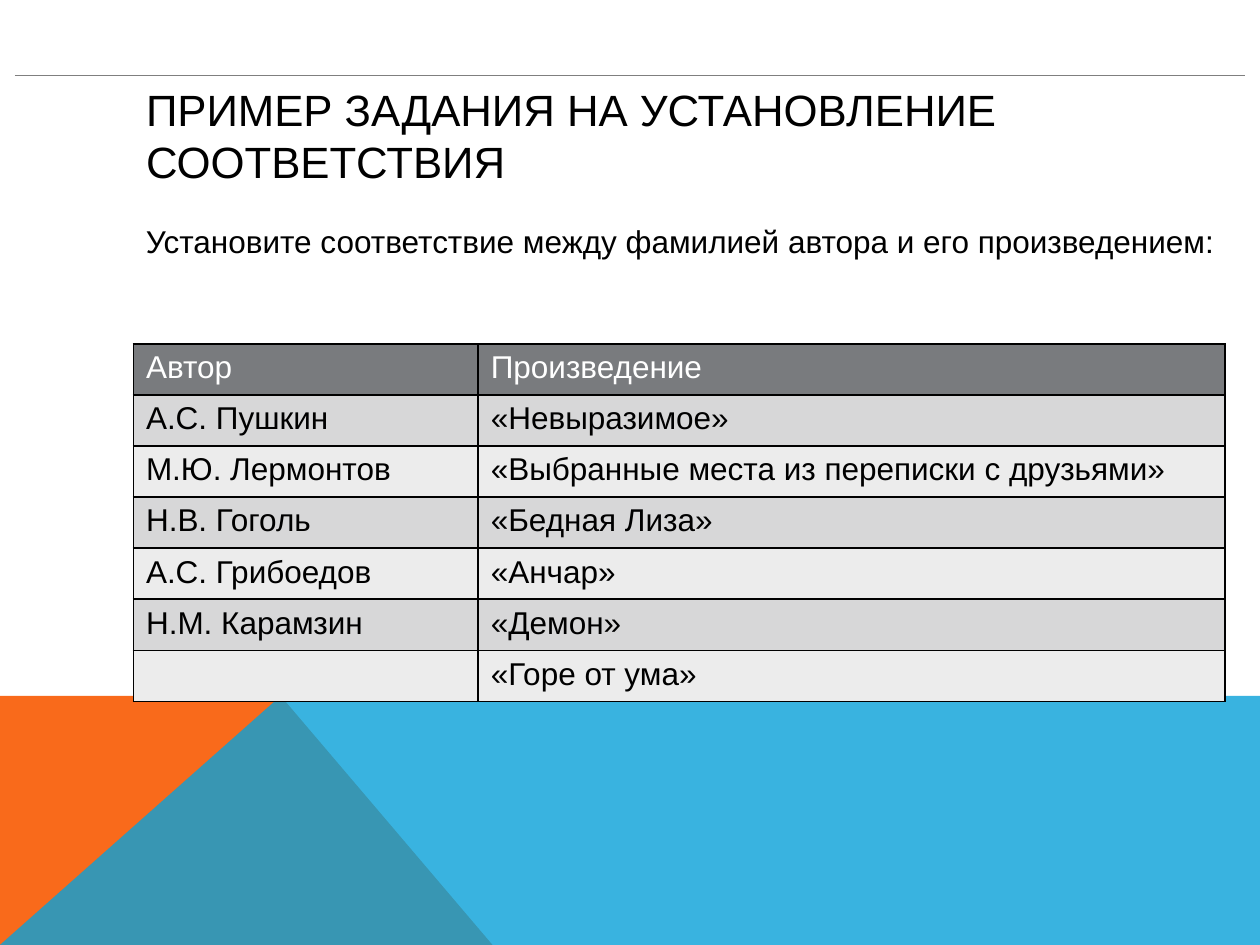
from lxml.etree import SubElement
from pptx import Presentation
from pptx.dml.color import RGBColor
from pptx.enum.shapes import MSO_CONNECTOR
from pptx.enum.text import MSO_ANCHOR, MSO_AUTO_SIZE, PP_ALIGN
from pptx.oxml.ns import qn
from pptx.util import Cm, Pt

# Content
TITLE = "ПРИМЕР ЗАДАНИЯ НА УСТАНОВЛЕНИЕ СООТВЕТСТВИЯ"
TASK = "Установите соответствие между фамилией автора и его произведением:"
ROWS = [
    ("Автор", "Произведение"),
    ("А.С. Пушкин", "«Невыразимое»"),
    ("М.Ю. Лермонтов", "«Выбранные места из переписки с друзьями»"),
    ("Н.В. Гоголь", "«Бедная Лиза»"),
    ("А.С. Грибоедов", "«Анчар»"),
    ("Н.М. Карамзин", "«Демон»"),
    ("", "«Горе от ума»"),
]

# Layout in centimetres
WIDTH, HEIGHT = 25.4, 19.05
LEFT = 2.69
BAND_TOP, BAND_PEAK = 14.03, 5.66
COL_WIDTHS = (6.95, 15.05)
ROW_HEIGHT = 1.03
BANDS = [
    ([(0, HEIGHT), (0, BAND_TOP), (BAND_PEAK, BAND_TOP), (9.93, HEIGHT)], "F96A1B", 100),
    ([(0, HEIGHT), (BAND_PEAK, BAND_TOP), (WIDTH, BAND_TOP), (WIDTH, HEIGHT)], "08A1D9", 80),
]


def rgb(value):
    return RGBColor.from_string(value)


def add_text(tf, text, size, color="000000"):
    p = tf.paragraphs[0]
    p.alignment = PP_ALIGN.LEFT
    r = p.add_run()
    r.text = text
    r.font.name = "Arial"
    r.font.size = Pt(size)
    r.font.bold = False
    r.font.color.rgb = rgb(color)


def add_band(s, points, color, opacity):
    corners = [(Cm(x), Cm(y)) for x, y in points]
    builder = s.shapes.build_freeform(*corners[0], scale=1.0)
    builder.add_line_segments(corners[1:], close=True)
    sp = builder.convert_to_shape()
    sp.shadow.inherit = False
    sp.fill.solid()
    sp.fill.fore_color.rgb = rgb(color)
    sp.line.fill.background()
    if opacity < 100:
        clr = sp.fill._xPr.find(qn("a:solidFill"))[0]
        SubElement(clr, qn("a:alpha"), val=str(opacity * 1000))


def fill_cell(cell, color):
    # Borders come before the fill in the cell properties
    tc_pr = cell._tc.get_or_add_tcPr()
    for side in ("lnL", "lnR", "lnT", "lnB"):
        ln = SubElement(tc_pr, qn(f"a:{side}"), w=str(Pt(1)))
        SubElement(SubElement(ln, qn("a:solidFill")), qn("a:srgbClr"), val="000000")
    cell.fill.solid()
    cell.fill.fore_color.rgb = rgb(color)


prs = Presentation()
prs.slide_width, prs.slide_height = Cm(WIDTH), Cm(HEIGHT)
s = prs.slides.add_slide(prs.slide_layouts[5])

# Background bands and rule
for band in BANDS:
    add_band(s, *band)
rule = s.shapes.add_connector(MSO_CONNECTOR.STRAIGHT, Cm(0.3), Cm(1.52), Cm(WIDTH - 0.3), Cm(1.52))
rule.line.color.rgb = rgb("7F7F7F")
rule.line.width = Pt(0.75)
SubElement(rule._element.spPr, qn("a:effectLst"))

# Title
title = s.shapes.title
title.left, title.top, title.width, title.height = Cm(LEFT), Cm(1.52), Cm(22.66), Cm(2.4)
tf = title.text_frame
tf.word_wrap = True
tf.auto_size = MSO_AUTO_SIZE.NONE
tf.vertical_anchor = MSO_ANCHOR.MIDDLE
add_text(tf, TITLE, 25)

# Task
task = s.shapes.add_textbox(Cm(LEFT), Cm(4.35), Cm(22.7), Cm(3.3))
task.text_frame.word_wrap = True
add_text(task.text_frame, TASK, 18)

# Table
table = s.shapes.add_table(len(ROWS), len(COL_WIDTHS), Cm(LEFT), Cm(6.93),
                           Cm(sum(COL_WIDTHS)), Cm(ROW_HEIGHT * len(ROWS))).table
for column, width in zip(table.columns, COL_WIDTHS):
    column.width = Cm(width)
for i, row in enumerate(ROWS):
    table.rows[i].height = Cm(ROW_HEIGHT)
    fill = "797B7E" if i == 0 else ("ECECEC", "D7D7D8")[i % 2]
    for j, text in enumerate(row):
        cell = table.cell(i, j)
        fill_cell(cell, fill)
        if text:
            add_text(cell.text_frame, text, 18, "000000" if i else "FFFFFF")

prs.save("out.pptx")
